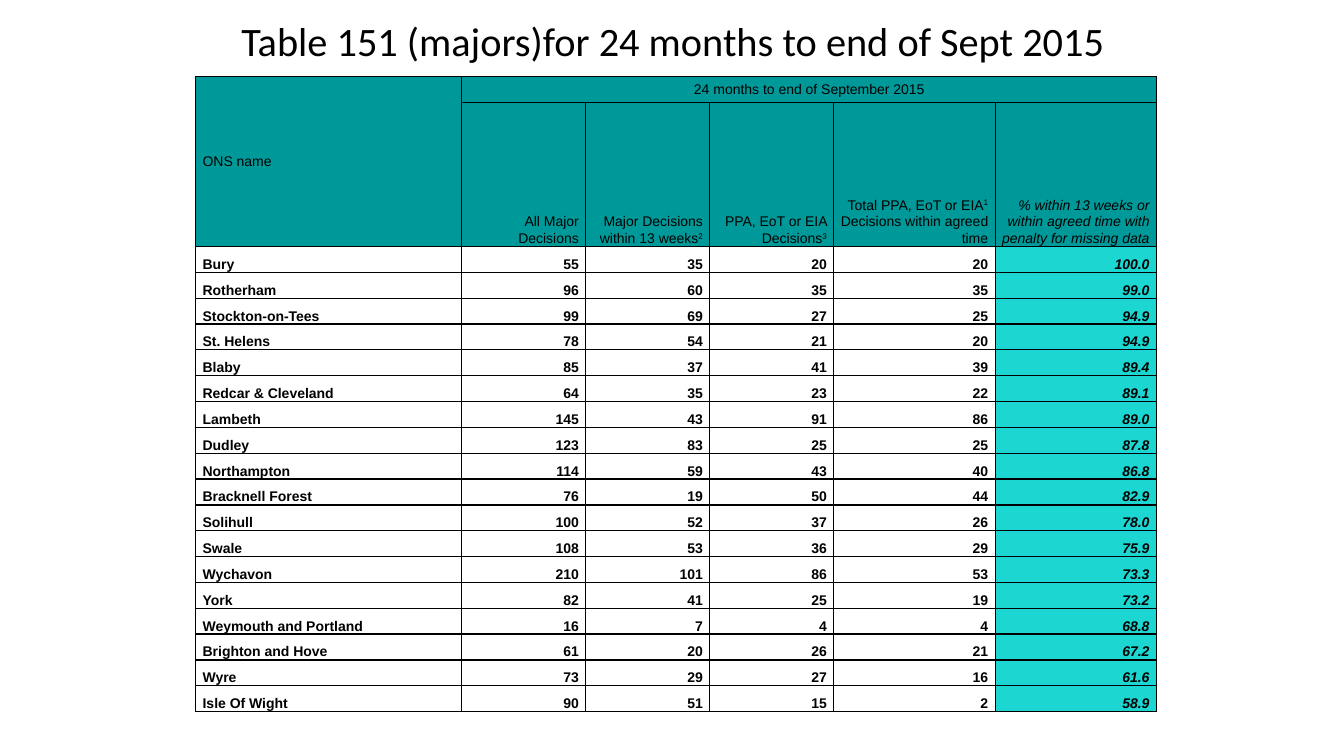
from dataclasses import dataclass

from lxml import etree
from pptx import Presentation
from pptx import util as u
from pptx.dml import color as col
from pptx.enum import text as txt
from pptx.oxml import ns

BLACK, TEAL, AQUA = "000000", "009999", "1CD6D2"
LEFT, MID, RIGHT = txt.PP_ALIGN.LEFT, txt.PP_ALIGN.CENTER, txt.PP_ALIGN.RIGHT
CENTRE, BASE = txt.MSO_ANCHOR.MIDDLE, txt.MSO_ANCHOR.BOTTOM

WIDTHS = (2.64, 1.23, 1.23, 1.23, 1.6, 1.6)
HIGH, HEAD = 6.3, 1.43

# Text between carets is raised
HEADS = (
    "All Major Decisions",
    "Major Decisions within 13 weeks^2^",
    "PPA, EoT or EIA Decisions^3^",
    "Total PPA, EoT or EIA^1^ Decisions within agreed time",
    "% within 13 weeks or within agreed time with penalty for missing data",
)


@dataclass(frozen=True)
class Town:
    name: str
    total: int
    timely: int
    agreed: int
    met: int
    rate: float

    def texts(self) -> list[str]:
        counts = (self.total, self.timely, self.agreed, self.met)
        return [self.name, *map(str, counts), f"{self.rate:.1f}"]


@dataclass(frozen=True)
class Style:
    align: txt.PP_ALIGN = RIGHT
    anchor: txt.MSO_ANCHOR = BASE
    fill: str | None = None
    bold: bool = False
    slant: bool = False


TOWNS = (
    Town("Bury", 55, 35, 20, 20, 100.0),
    Town("Rotherham", 96, 60, 35, 35, 99.0),
    Town("Stockton-on-Tees", 99, 69, 27, 25, 94.9),
    Town("St. Helens", 78, 54, 21, 20, 94.9),
    Town("Blaby", 85, 37, 41, 39, 89.4),
    Town("Redcar & Cleveland", 64, 35, 23, 22, 89.1),
    Town("Lambeth", 145, 43, 91, 86, 89.0),
    Town("Dudley", 123, 83, 25, 25, 87.8),
    Town("Northampton", 114, 59, 43, 40, 86.8),
    Town("Bracknell Forest", 76, 19, 50, 44, 82.9),
    Town("Solihull", 100, 52, 37, 26, 78.0),
    Town("Swale", 108, 53, 36, 29, 75.9),
    Town("Wychavon", 210, 101, 86, 53, 73.3),
    Town("York", 82, 41, 25, 19, 73.2),
    Town("Weymouth and Portland", 16, 7, 4, 4, 68.8),
    Town("Brighton and Hove", 61, 20, 26, 21, 67.2),
    Town("Wyre", 73, 29, 27, 16, 61.6),
    Town("Isle Of Wight", 90, 51, 15, 2, 58.9),
)


def paint(target, shade: str) -> None:
    """Colour a fill or a font."""
    if hasattr(target, "solid"):
        target.solid()
        target.fore_color.rgb = col.RGBColor.from_string(shade)
    else:
        target.color.rgb = col.RGBColor.from_string(shade)


def dress(run, face: str, size: float) -> None:
    run.font.name = face
    run.font.size = u.Pt(size)
    paint(run.font, BLACK)


def frame(cell) -> None:
    """Draw a thin line on all four sides of a cell."""
    props = cell._tc.get_or_add_tcPr()
    for side in ("lnL", "lnR", "lnT", "lnB"):
        line = etree.SubElement(props, ns.qn(f"a:{side}"), w=str(u.Pt(1)))
        fill = etree.SubElement(line, ns.qn("a:solidFill"))
        etree.SubElement(fill, ns.qn("a:srgbClr"), val=BLACK)


def write(cell, words: str, style: Style) -> None:
    cell.margin_left = cell.margin_right = u.Inches(0.07)
    cell.margin_top = cell.margin_bottom = 0
    cell.vertical_anchor = style.anchor
    if style.fill:
        paint(cell.fill, style.fill)
    para = cell.text_frame.paragraphs[0]
    para.alignment = style.align
    para.line_spacing = 1.07
    for n, part in enumerate(words.split("^")):
        if not part:
            continue
        run = para.add_run()
        run.text = part
        dress(run, "Arial", 10)
        run.font.bold = style.bold
        run.font.italic = style.slant
        if n % 2:
            run.font._element.set("baseline", "30000")


def add_title(slide) -> None:
    box = slide.shapes.add_textbox(
        u.Inches(1.8), u.Inches(0.13), u.Inches(9.75), u.Inches(0.54))
    body = box.text_frame
    body.text = "Table 151 (majors)for 24 months to end of Sept 2015"
    body.word_wrap = True
    body.vertical_anchor = CENTRE
    para = body.paragraphs[0]
    para.alignment = MID
    dress(para.runs[0], "Calibri", 28.8)


def add_grid(slide) -> None:
    count = len(TOWNS) + 2
    grid = slide.shapes.add_table(
        count, len(WIDTHS), u.Inches(1.94), u.Inches(0.76),
        u.Inches(sum(WIDTHS)), u.Inches(HIGH)).table
    grid.first_row = grid.horz_banding = False
    for column, width in zip(grid.columns, WIDTHS):
        column.width = u.Inches(width)
    for n, row in enumerate(grid.rows):
        row.height = u.Inches(HEAD if n == 1 else (HIGH - HEAD) / (count - 1))
        for cell in row.cells:
            frame(cell)
            cell.fill.background()

    # Heading rows
    last = len(WIDTHS) - 1
    grid.cell(0, 0).merge(grid.cell(1, 0))
    grid.cell(0, 1).merge(grid.cell(0, last))
    write(grid.cell(0, 0), "ONS name", Style(LEFT, CENTRE, TEAL))
    write(grid.cell(0, 1), "24 months to end of September 2015",
          Style(MID, CENTRE, TEAL))
    for c, words in enumerate(HEADS, 1):
        write(grid.cell(1, c), words, Style(fill=TEAL, slant=c == last))

    # One row for each town
    name, count, rate = (Style(LEFT, bold=True), Style(bold=True),
                         Style(fill=AQUA, bold=True, slant=True))
    styles = [name] + [count] * (last - 1) + [rate]
    for r, town in enumerate(TOWNS, 2):
        for c, (words, style) in enumerate(zip(town.texts(), styles)):
            write(grid.cell(r, c), words, style)


def main() -> None:
    deck = Presentation()
    deck.slide_width, deck.slide_height = u.Inches(13.33), u.Inches(7.5)
    slide = deck.slides.add_slide(deck.slide_layouts[6])
    add_title(slide)
    add_grid(slide)
    deck.save("out.pptx")


if __name__ == "__main__":
    main()
